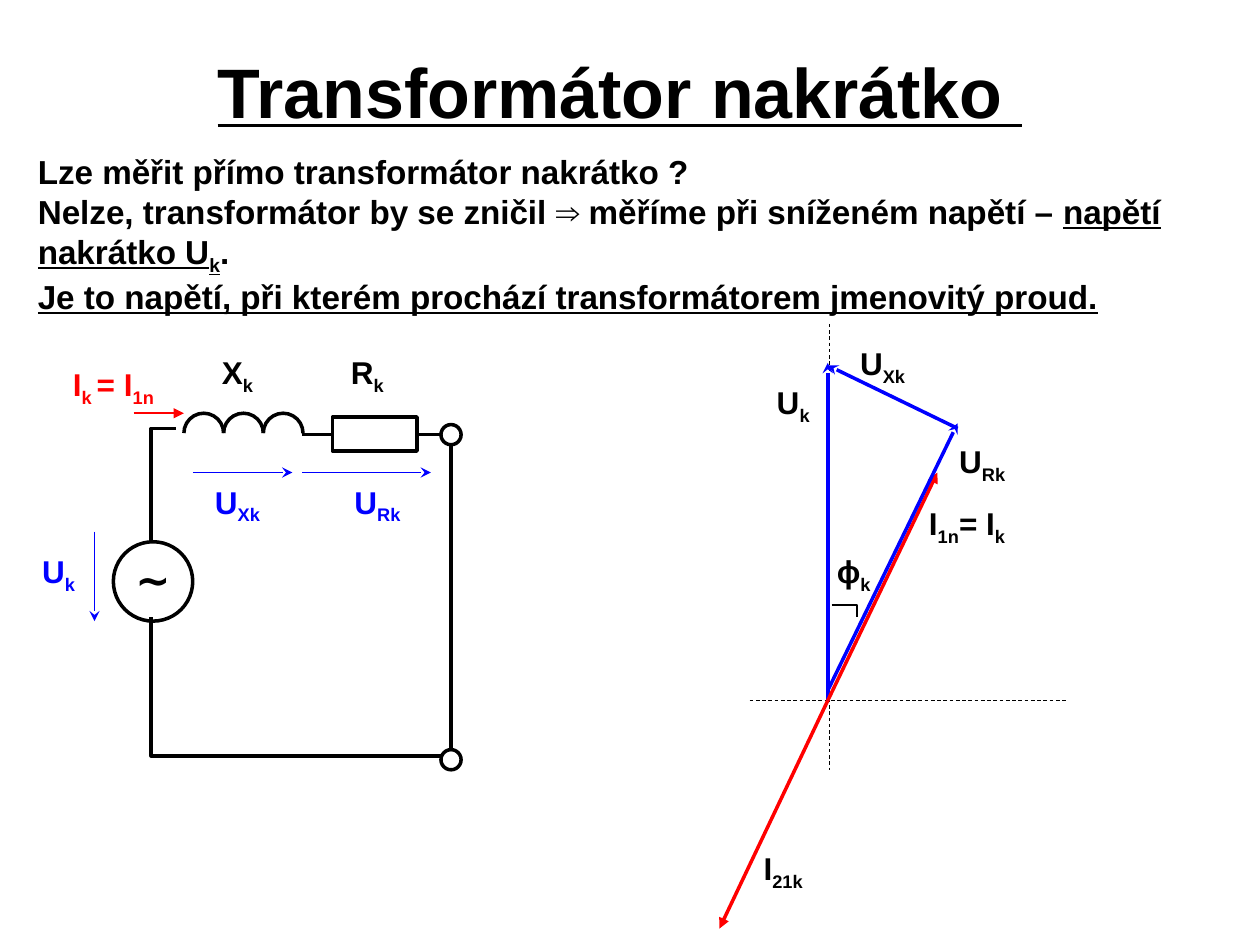
from lxml import etree
from pptx import Presentation
from pptx.dml.color import RGBColor
from pptx.enum.dml import MSO_LINE
from pptx.enum.shapes import MSO_CONNECTOR, MSO_SHAPE
from pptx.enum.text import MSO_ANCHOR, MSO_AUTO_SIZE, PP_ALIGN
from pptx.oxml.ns import qn
from pptx.util import Inches, Pt

OVAL, RECTANGLE, ARC = MSO_SHAPE.OVAL, MSO_SHAPE.RECTANGLE, MSO_SHAPE.ARC
STRAIGHT = MSO_CONNECTOR.STRAIGHT
DASH = MSO_LINE.DASH
CENTER, LEFT = PP_ALIGN.CENTER, PP_ALIGN.LEFT
MIDDLE, TOP = MSO_ANCHOR.MIDDLE, MSO_ANCHOR.TOP
BLACK, BLUE, RED = "000000", "0000FF", "FF0000"

deck = Presentation()
deck.slide_width, deck.slide_height = Inches(10), Inches(7.5)
page = deck.slides.add_slide(deck.slide_layouts[1])
shapes = page.shapes

# Grid of 100 columns and 75 rows; every length below is in these units
UNIT = deck.slide_width // 100


def outline(shape, color, width, arrow=None):
    """Colour the line of a shape or connector and remove its shadow."""
    shape.line.color.rgb = RGBColor.from_string(color)
    shape.line.width = Pt(width)
    if arrow:
        etree.SubElement(shape.line._get_or_add_ln(), qn("a:tailEnd"), type=arrow)
    if hasattr(shape, "fill"):
        shape.fill.background()
        shape.shadow.inherit = False
    else:
        etree.SubElement(shape._element.spPr, qn("a:effectLst"))


def write(para, spans, size, color, align):
    """Fill a paragraph with (text, underlined, subscript) spans."""
    para.alignment = align
    para.space_before = Pt(0)
    for text, underlined, subscript in spans:
        span = para.add_run()
        span.text = text
        font = span.font
        font.name, font.size, font.bold = "Arial", Pt(size), True
        font.underline = underlined
        font.color.rgb = RGBColor.from_string(color)
        if subscript:
            font._element.set("baseline", "-25000")


# Title and body text
title, body = shapes.title, page.placeholders[1]
for box, (left, top, width, height), anchor in [
    (title, (12.2, 2.8, 74, 8.7), MIDDLE),
    (body, (2, 11.5, 96.1, 13.8), TOP),
]:
    box.left, box.top = int(left * UNIT), int(top * UNIT)
    box.width, box.height = int(width * UNIT), int(height * UNIT)
    box.text_frame.word_wrap = True
    box.text_frame.auto_size = MSO_AUTO_SIZE.NONE
    box.text_frame.vertical_anchor = anchor

write(title.text_frame.paragraphs[0],
      [("Transformátor nakrátko ", True, False)], 40, BLACK, CENTER)

body_lines = [
    [("Lze měřit přímo transformátor nakrátko ?", False, False)],
    [("Nelze, transformátor by se zničil ⇒ měříme při sníženém napětí – ", False, False),
     ("napětí nakrátko U", True, False), ("k", True, True), (".", False, False)],
    [("Je to napětí, při kterém prochází transformátorem jmenovitý proud.", True, False)],
]
for number, spans in enumerate(body_lines):
    frame = body.text_frame
    para = frame.add_paragraph() if number else frame.paragraphs[0]
    write(para, spans, 19, BLACK, LEFT)
    properties = para._p.get_or_add_pPr()
    properties.set("marL", "0")
    properties.set("indent", "0")
    etree.SubElement(properties, qn("a:buNone"))

# Circuit parts: terminals, source, resistor
for kind, left, top, width, height in [
    (OVAL, 35, 59.5, 1.6, 1.6),
    (OVAL, 35, 33.7, 1.6, 1.6),
    (OVAL, 9, 43, 6.3, 6.3),
    (RECTANGLE, 26.4, 33.1, 6.7, 2.7),
]:
    part = shapes.add_shape(kind, *(int(n * UNIT) for n in (left, top, width, height)))
    outline(part, BLACK, 2)

# Coil: three half circles in a row
COIL_LEFT, COIL_TOP, TURN = 14.6, 32.8, 3.15
for turn in range(3):
    left = COIL_LEFT + turn * TURN
    arc = shapes.add_shape(ARC, *(int(n * UNIT) for n in (left, COIL_TOP, TURN, TURN)))
    arc.adjustments[0], arc.adjustments[1] = 108, 0  # 180° to 0°
    outline(arc, BLACK, 2)

# Bent wires and the angle mark
for points, width in [
    ([(12.2, 49.4), (12.2, 60.3), (34.9, 60.3)], 2),
    ([(12.2, 42.9), (12.2, 34.3), (14.5, 34.3)], 2),
    ([(65.7, 47.7), (66.6, 47.9), (67.3, 48.2), (67.8, 48.5), (68.3, 48.9)], 1),
]:
    builder = shapes.build_freeform(*points[0], scale=UNIT)
    builder.add_line_segments(points[1:], close=False)
    outline(builder.convert_to_shape(), BLACK, width)

# Straight wires, axes and arrows: from, to, colour, width, arrowhead
ORIGIN = (65.7, 55.6)
for start, end, color, width, arrow in [
    ((26.3, 34.5), (24, 34.5), BLACK, 2, None),
    ((33.2, 34.5), (34.9, 34.5), BLACK, 2, None),
    ((35.8, 35.4), (35.8, 59.4), BLACK, 2, None),
    ((15.3, 37.5), (23.2, 37.5), BLUE, 1, "stealth"),
    ((24, 37.5), (34.2, 37.5), BLUE, 1, "stealth"),
    ((7.5, 42.2), (7.5, 49.3), BLUE, 1, "stealth"),
    ((10.6, 32.8), (14.6, 32.8), RED, 1, "triangle"),
    ((59.5, 55.6), (84.7, 55.6), BLACK, 0.5, None),
    ((65.8, 25.7), (65.8, 61.1), BLACK, 0.5, None),
    (ORIGIN, (65.7, 28.8), BLUE, 2, "stealth"),
    (ORIGIN, (74.4, 37.5), RED, 2, "triangle"),
    (ORIGIN, (57.1, 73.7), RED, 2, "triangle"),
    ((65.7, 54.8), (76, 33.6), BLUE, 2, "stealth"),
    ((76, 34), (65.7, 29), BLUE, 2, "stealth"),
]:
    line = shapes.add_connector(STRAIGHT, *(int(n * UNIT) for n in start + end))
    if width == 0.5:
        line.line.dash_style = DASH
    outline(line, color, width, arrow)

# Labels: "|" switches between normal text and subscript
for label, left, top, width, size, color in [
    ("I|k |= I|1n", 4.3, 29, 9.4, 18, RED),
    ("U|Xk", 16.1, 38.3, 5.5, 18, BLUE),
    ("U|Rk", 27.2, 38.3, 5.5, 18, BLUE),
    ("U|k", 2.7, 43.8, 3.9, 18, BLUE),
    ("X|k", 16.1, 28, 5.5, 18, BLACK),
    ("R|k", 26.4, 28, 5.5, 18, BLACK),
    ("∼", 9.8, 43.9, 4.7, 24, BLACK),
    ("U|k", 61, 30.4, 3.9, 18, BLACK),
    ("U|Xk", 67.3, 27.3, 5.5, 18, BLACK),
    ("U|Rk", 75.2, 35.1, 5.5, 18, BLACK),
    ("I|1n|= I|k", 72.8, 40, 7.9, 18, BLACK),
    ("ϕ|k", 65, 43.8, 5.5, 18, BLACK),
    ("I|21k", 59.4, 67.4, 5.5, 18, BLACK),
]:
    height = size / 6
    box = shapes.add_textbox(*(int(n * UNIT) for n in (left, top, width, height)))
    frame = box.text_frame
    frame.word_wrap = True
    frame.margin_left = frame.margin_right = frame.margin_top = frame.margin_bottom = 0
    spans = [(text, False, index % 2 == 1) for index, text in enumerate(label.split("|"))]
    write(frame.paragraphs[0], spans, size, color, CENTER)

deck.save("out.pptx")
